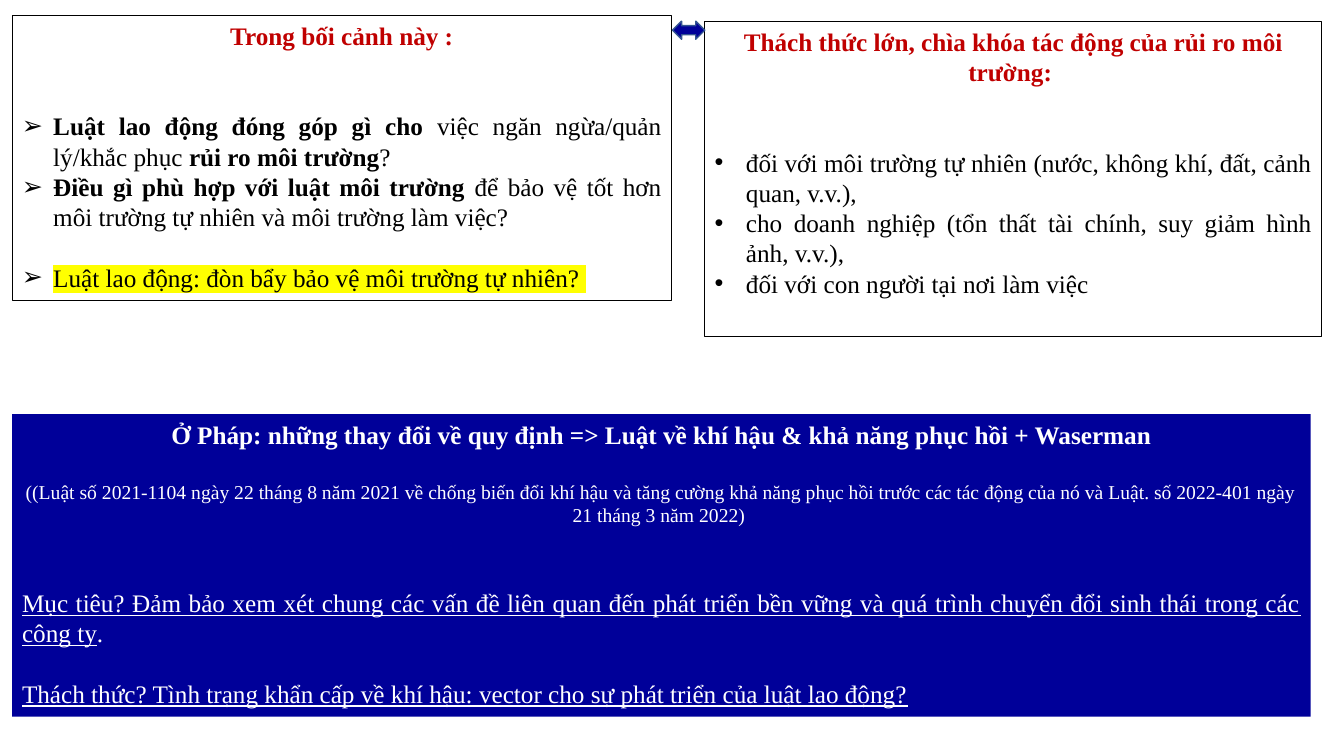
from dataclasses import dataclass

from lxml.etree import SubElement
from pptx import Presentation
from pptx.dml.color import RGBColor
from pptx.enum.shapes import MSO_SHAPE
from pptx.enum.text import MSO_ANCHOR, PP_ALIGN
from pptx.oxml.ns import qn
from pptx.util import Inches, Pt

FONT = "Times New Roman"
BLACK, WHITE, RED, NAVY, YELLOW = "000000", "FFFFFF", "C00000", "000099", "FFFF00"
BLANK_LINE = 21.6  # points left free for one skipped line
INDENT = 0.31


@dataclass
class Run:
    text: str
    bold: bool = False
    underline: bool = False
    highlight: str = ""


@dataclass
class Para:
    runs: list[Run]
    align: PP_ALIGN = PP_ALIGN.JUSTIFY
    size: float = 18
    color: str = BLACK
    bullet: str = ""
    skipped_lines: int = 0


@dataclass
class Panel:
    left: float
    top: float
    width: float
    height: float
    paras: list[Para]
    fill: str = ""
    line: str = ""


def rgb(value: str) -> RGBColor:
    return RGBColor.from_string(value)


def add_box(kind, left: float, top: float, width: float, height: float,
            fill: str = "", line: str = "", line_width: float = 0.75):
    box = slide.shapes.add_shape(kind, Inches(left), Inches(top), Inches(width), Inches(height))
    box.shadow.inherit = False
    if fill:
        box.fill.solid()
        box.fill.fore_color.rgb = rgb(fill)
    else:
        box.fill.background()
    if line:
        box.line.color.rgb = rgb(line)
        box.line.width = Pt(line_width)
    else:
        box.line.fill.background()
    return box


def add_run(paragraph, text: str, *, size: float, color: str, bold: bool = False,
            underline: bool = False, highlight: str = "") -> None:
    run = paragraph.add_run()
    run.text = text
    font = run.font
    font.size, font.bold, font.underline = Pt(size), bold, underline
    font.color.rgb = rgb(color)
    if highlight:
        mark = SubElement(font._element, qn("a:highlight"))
        SubElement(mark, qn("a:srgbClr"), val=highlight)
    font.name = FONT


def add_bullet(paragraph, symbol: str) -> None:
    props = paragraph._p.get_or_add_pPr()
    props.set("marL", str(Inches(INDENT)))
    props.set("indent", str(-Inches(INDENT)))
    SubElement(props, qn("a:buFont"), typeface="Arial")
    SubElement(props, qn("a:buChar"), char=symbol)


def draw_panel(panel: Panel) -> None:
    box = add_box(MSO_SHAPE.RECTANGLE, panel.left, panel.top, panel.width, panel.height,
                  panel.fill, panel.line)
    frame = box.text_frame
    frame.word_wrap = True
    frame.vertical_anchor = MSO_ANCHOR.TOP
    for index, para in enumerate(panel.paras):
        paragraph = frame.add_paragraph() if index else frame.paragraphs[0]
        paragraph.alignment = para.align
        paragraph.space_before = Pt(para.skipped_lines * BLANK_LINE)
        if para.bullet:
            add_bullet(paragraph, para.bullet)
        for run in para.runs:
            add_run(paragraph, run.text, size=para.size, color=para.color, bold=run.bold,
                    underline=run.underline, highlight=run.highlight)


def heading(text: str, color: str) -> Para:
    return Para([Run(text, bold=True)], PP_ALIGN.CENTER, color=color)


# Content of the three panels
context = Panel(0.12, 0.15, 6.54, 2.83, line=BLACK, paras=[
    heading("Trong bối cảnh này :", RED),
    Para([Run("Luật lao động đóng góp gì cho ", bold=True),
          Run("việc ngăn ngừa/quản lý/khắc phục "),
          Run("rủi ro môi trường", bold=True), Run("?")], bullet="➢", skipped_lines=2),
    Para([Run("Điều gì phù hợp với luật môi trường ", bold=True),
          Run("để bảo vệ tốt hơn môi trường tự nhiên và môi trường làm việc? ")], bullet="➢"),
    Para([Run("Luật lao động: đòn bẩy bảo vệ môi trường tự nhiên? ", highlight=YELLOW)],
         bullet="➢", skipped_lines=1),
])

challenges = Panel(6.99, 0.21, 6.12, 3.13, line=BLACK, paras=[
    heading("Thách thức lớn, chìa khóa tác động của rủi ro môi trường: ", RED),
    Para([Run("đối với môi trường tự nhiên (nước, không khí, đất, cảnh quan, v.v.),")],
         bullet="•", skipped_lines=2),
    Para([Run("cho doanh nghiệp (tổn thất tài chính, suy giảm hình ảnh, v.v.),")], bullet="•"),
    Para([Run("đối với con người tại nơi làm việc")], bullet="•"),
])

french_law = Panel(0.12, 4.11, 12.88, 3, fill=NAVY, paras=[
    heading("Ở Pháp: những thay đổi về quy định => Luật về khí hậu & khả năng phục hồi + Waserman",
            WHITE),
    Para([Run("((Luật số 2021-1104 ngày 22 tháng 8 năm 2021 về chống biến đổi khí hậu và tăng cường "
              "khả năng phục hồi trước các tác động của nó và Luật. số 2022-401 ngày 21 tháng 3 "
              "năm 2022) ")], PP_ALIGN.CENTER, size=14, color=WHITE, skipped_lines=1),
    Para([Run("Mục tiêu? Đảm bảo xem xét chung các vấn đề liên quan đến phát triển bền vững và "
              "quá trình chuyển đổi sinh thái trong các công ty", underline=True), Run(".")],
         color=WHITE, skipped_lines=2),
    Para([Run("Thách thức? Tình trạng khẩn cấp về khí hậu: vector cho sự phát triển của "
              "luật lao động?", underline=True)], color=WHITE, skipped_lines=1),
])

# Slide
deck = Presentation()
deck.slide_width, deck.slide_height = Inches(13.33), Inches(7.5)
slide = deck.slides.add_slide(deck.slide_layouts[6])

for section in (context, challenges, french_law):
    draw_panel(section)

# Two-way link between context and challenges
add_box(MSO_SHAPE.LEFT_RIGHT_ARROW, 6.67, 0.21, 0.32, 0.18, NAVY, "325491", 1)

deck.save("out.pptx")
